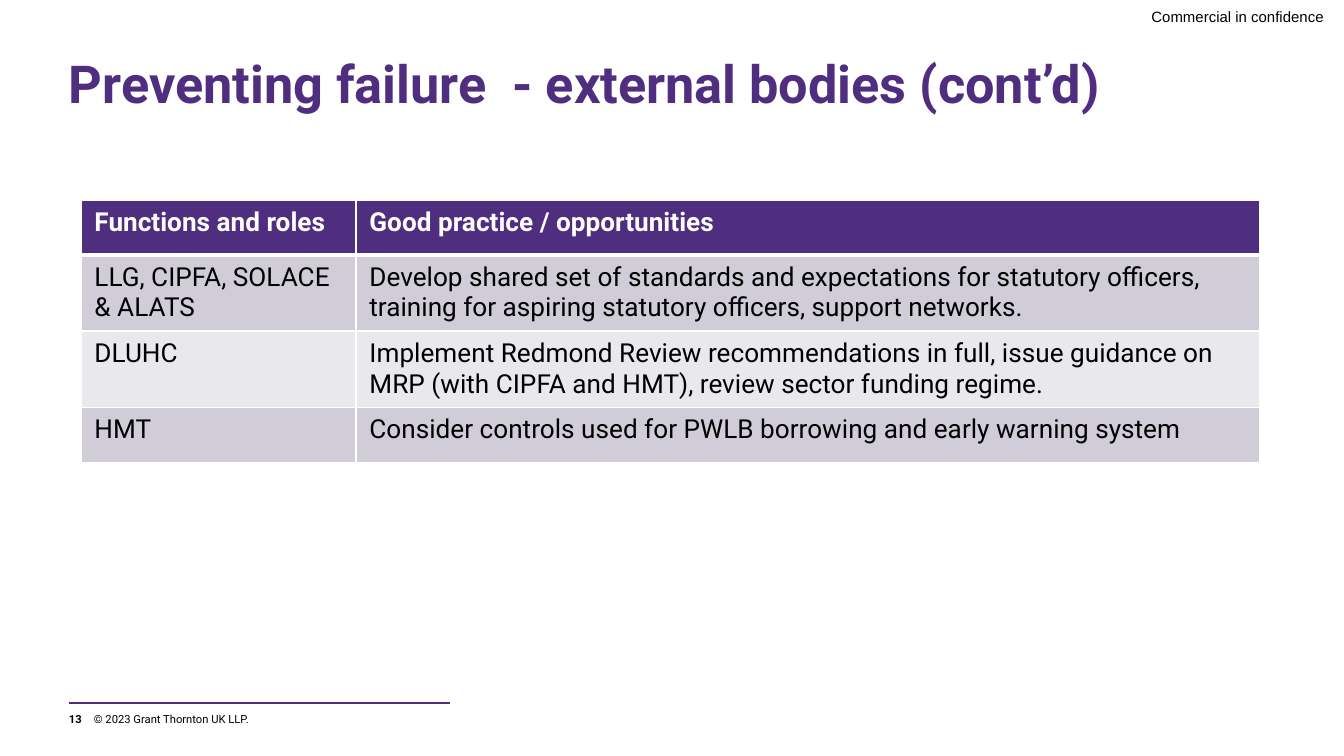
from lxml import etree
from pptx import Presentation, util as u
from pptx.dml.color import RGBColor
from pptx.enum import shapes, text
from pptx.oxml.ns import qn

PURPLE, BLACK, WHITE = "4F2D7F", "000000", "FFFFFF"


def px(n):
    return u.Emu(round(n * 914400 / 134.4))


def write(tf, words, size, color, bold=False, name="Roboto", **para):
    p = tf.paragraphs[0]
    for key, value in para.items():
        setattr(p, key, value)
    r = p.add_run()
    r.text = words
    fmt = {"size": u.Pt(size), "bold": bold, "name": name}
    for key, value in fmt.items():
        setattr(r.font, key, value)
    r.font.color.rgb = RGBColor.from_string(color)


prs = Presentation()
prs.slide_width, prs.slide_height = px(1344), px(756)
s = prs.slides.add_slide(prs.slide_layouts[6])

boxes = [
    ((94, 712, 579, 14), "© 2023 Grant Thornton UK LLP.", {"size": 6, "color": BLACK}),
    ((1134, 0, 210, 32), "Commercial in confidence",
     {"size": 8, "color": BLACK, "name": "Arial", "alignment": text.PP_ALIGN.RIGHT}),
    ((69, 712, 24, 14), "13", {"size": 6, "color": BLACK, "bold": True}),
    ((69, 58, 1060, 117), "Preventing failure  - external bodies (cont’d)",
     {"size": 28, "color": PURPLE, "bold": True, "line_spacing": 0.9}),
]
for box, words, fmt in boxes:
    tf = s.shapes.add_textbox(*map(px, box)).text_frame
    tf.word_wrap = True
    for side in ("left", "top", "right", "bottom"):
        setattr(tf, f"margin_{side}", 0)
    write(tf, words, **fmt)
s.shapes[1].text_frame.vertical_anchor = text.MSO_ANCHOR.MIDDLE
s.shapes[1].width = px(1324 - 1134)

rule = s.shapes.add_connector(shapes.MSO_CONNECTOR.STRAIGHT, px(69), px(703), px(450), px(703))
rule.line.color.rgb = RGBColor.from_string(PURPLE)
rule.line.width = u.Pt(1.5)
etree.SubElement(rule._element.spPr, qn("a:effectLst"))

rows = [
    ("Functions and roles", "Good practice / opportunities"),
    ("LLG, CIPFA, SOLACE & ALATS",
     "Develop shared set of standards and expectations for statutory officers, "
     "training for aspiring statutory officers, support networks."),
    ("DLUHC",
     "Implement Redmond Review recommendations in full, issue guidance on MRP "
     "(with CIPFA and HMT), review sector funding regime."),
    ("HMT", "Consider controls used for PWLB borrowing and early warning system"),
]
fills = [PURPLE, "D0CDD8", "E9E8EC", "D0CDD8"]
table = s.shapes.add_table(4, 2, px(81), px(200), px(1179), px(260)).table
for col, width in zip(table.columns, (275, 904)):
    col.width = px(width)
for row, height in zip(table.rows, (55, 75, 75, 55)):
    row.height = px(height)

for i, (row, fill) in enumerate(zip(rows, fills)):
    for j, words in enumerate(row):
        cell = table.cell(i, j)
        write(cell.text_frame, words, 14, BLACK if i else WHITE, bold=i == 0)
        tcPr = cell._tc.get_or_add_tcPr()
        for side in "LRTB":
            heavy = (i, side) in ((0, "B"), (1, "T"))
            ln = etree.SubElement(tcPr, qn(f"a:ln{side}"), w=str(u.Pt(3 if heavy else 1)))
            solid = etree.SubElement(ln, qn("a:solidFill"))
            etree.SubElement(solid, qn("a:srgbClr"), val=WHITE)
        cell.fill.solid()
        cell.fill.fore_color.rgb = RGBColor.from_string(fill)

prs.save("out.pptx")
